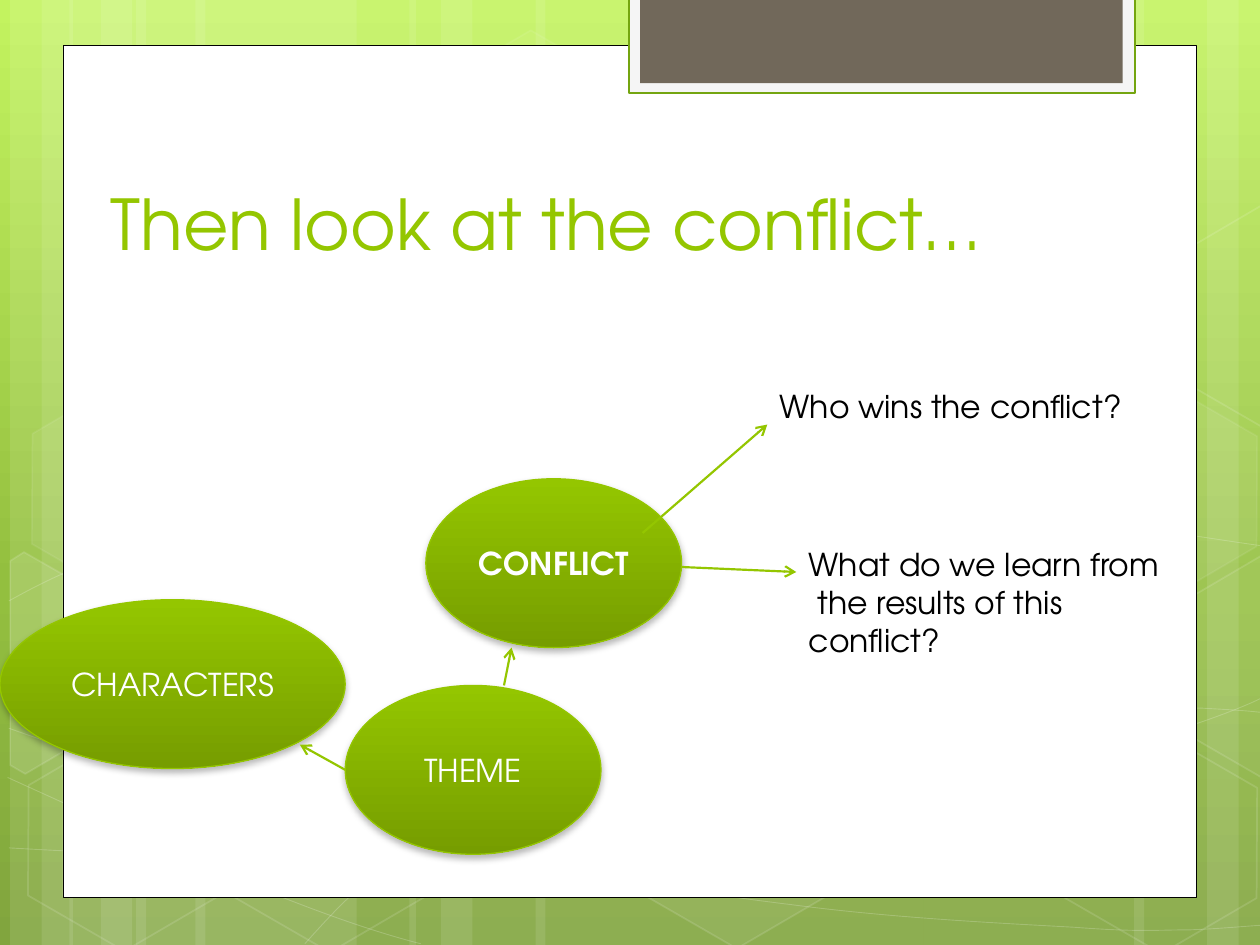
from copy import deepcopy
from math import cos, radians, sin

from lxml import etree
from pptx import Presentation
from pptx.dml.color import RGBColor
from pptx.enum.shapes import MSO_CONNECTOR, MSO_SHAPE
from pptx.enum.text import MSO_ANCHOR, PP_ALIGN
from pptx.oxml.ns import qn
from pptx.util import Inches, Pt

RECTANGLE, HEXAGON, ELLIPSE = MSO_SHAPE.RECTANGLE, MSO_SHAPE.HEXAGON, MSO_SHAPE.OVAL
STRAIGHT = MSO_CONNECTOR.STRAIGHT
LEFT, CENTER = PP_ALIGN.LEFT, PP_ALIGN.CENTER
TOP, MIDDLE, BOTTOM = MSO_ANCHOR.TOP, MSO_ANCHOR.MIDDLE, MSO_ANCHOR.BOTTOM

FONT = "TeX Gyre Adventor"
WHITE = RGBColor(0xFF, 0xFF, 0xFF)
BLACK = RGBColor(0x00, 0x00, 0x00)
GREEN = RGBColor(0x94, 0xC6, 0x00)
DARK_GREEN = RGBColor(0x76, 0x9D, 0x00)
TAB_EDGE = RGBColor(0x74, 0xA5, 0x10)
TAB_PAPER = RGBColor(0xF5, 0xF5, 0xF5)
TAB_BROWN = RGBColor(0x71, 0x68, 0x5A)
SKY = [(0, RGBColor(0xC3, 0xF3, 0x5F)), (0.62, RGBColor(0x93, 0xBF, 0x3F)),
       (1, RGBColor(0x81, 0xA5, 0x3E))]
BUBBLE = [(0, GREEN), (1, DARK_GREEN)]

# Background decoration: stripes as (left, width, rotation)
STRIPES = [(1.08, 1.75, 0), (0.08, 0.5, 0), (0.33, 0.83, 0), (1.55, 1.75, 0),
           (0.55, 0.5, 0), (0.8, 0.83, 0), (7.33, 1.75, 180), (9.58, 0.5, 180),
           (9, 0.83, 180), (4.25, 3.08, 0), (3.25, 0.5, 0), (3.5, 0.83, 0)]
# A start point, then Bezier segments (two controls, end) or straight ones (end)
WAVES = [
    [(0.07, 6.73), (0.61, 6.76, 1.15, 6.79, 1.9, 6.78), (2.65, 6.77, 3.58, 6.75, 4.58, 6.65),
     (5.58, 6.55, 7, 6.36, 7.92, 6.17), (8.83, 5.98, 9.77, 5.68, 10.07, 5.51)],
    [(0.07, 4.77), (0.36, 4.61, 0.65, 4.46, 1.21, 4.31), (1.78, 4.16, 2.59, 3.94, 3.47, 3.87),
     (4.36, 3.8, 5.44, 3.79, 6.54, 3.87), (7.64, 3.95, 9.47, 4.26, 10.07, 4.34)],
    [(0.06, 6.17), (1.27, 6.72, 2.47, 7.27, 3.34, 7.49)],
    [(0.07, 5.78), (0.38, 5.89, 0.7, 6, 1.28, 6.16), (1.86, 6.31, 2.73, 6.56, 3.57, 6.73),
     (4.4, 6.9, 5.45, 7.08, 6.28, 7.18), (7.11, 7.29, 8, 7.33, 8.53, 7.36),
     (9.05, 7.4, 9.19, 7.38, 9.45, 7.38), (9.71, 7.37, 9.89, 7.35, 10.07, 7.34)],
    [(2.42, 7.49), (2.6, 7.29, 2.78, 7.09, 3.02, 6.91), (3.26, 6.73, 3.6, 6.53, 3.88, 6.39),
     (4.16, 6.25, 4.33, 6.19, 4.7, 6.09), (5.06, 5.99, 5.73, 5.85, 6.08, 5.78),
     (6.44, 5.71, 6.49, 5.71, 6.8, 5.69), (7.11, 5.66, 7.6, 5.63, 7.94, 5.62),
     (8.29, 5.61, 8.86, 5.62, 8.86, 5.62), (9.53, 5.62),
     (9.71, 5.63, 9.88, 5.64, 9.97, 5.65), (10.06, 5.66, 10.03, 5.65, 10.06, 5.66)],
]
TILT = 30
# (left, top, fill opacity, line opacity) in percent
HEXAGONS = [(3.34, 0.36, 4, 8), (4.97, 5.89, 6, 12), (0.11, 5.91, 0, 12),
            (0.14, 3.12, 7, 8), (1.74, 5.92, 0, 12), (7.53, 4.53, 10, 12),
            (8.34, 5.93, 0, 12), (8.34, 3.14, 7, 8)]
# Hexagons cut by the slide edge: (centre, corners, fill opacity)
CUT_HEXAGONS = [
    ((0.36, 5.35), [(0.08, 4.45), (0.19, 4.38), (0.96, 4.82), (0.95, 5.7),
                    (0.2, 6.14), (0.08, 6.07)], 10),
    ((9.85, 5.2), [(9.26, 4.85), (10.01, 4.41), (10.09, 4.46), (10.09, 6.13),
                   (10.02, 6.17), (9.26, 5.73)], 4),
    ((9.85, 2.41), [(9.26, 2.07), (10.01, 1.63), (10.1, 1.68), (10.09, 3.35),
                    (10.02, 3.39), (9.26, 2.95)], 0),
]
# (box, fill, line colour, line width)
PANELS = [((0.5, 0.36, 9, 6.76), WHITE, BLACK, 0.5),
          ((4.99, -0.02, 4.02, 0.76), TAB_PAPER, TAB_EDGE, 1.25),
          ((5.08, -0.02, 3.83, 0.68), TAB_BROWN, None, 0)]

TITLE = "Then look at the conflict…"
BUBBLES = [("THEME", (2.74, 5.44, 2.03, 1.34), False),
           ("CHARACTERS", (0, 4.76, 2.74, 1.34), False),
           ("CONFLICT", (3.38, 3.8, 2.03, 1.34), True)]
ARROWS = [(4, 5.44, 4.06, 5.14), (2.74, 6.11, 2.38, 5.91),
          (5.1, 4.23, 6.09, 3.37), (5.41, 4.5, 6.32, 4.54)]
QUESTIONS = [("Who wins the conflict?", (6.09, 3.02, 2.95, 0.71), False),
             ("What do we learn from\v the results of this conflict?",
              (6.32, 4.28, 3.01, 1.01), True)]


def inches(values):
    return [Inches(value) for value in values]


def set_opacity(fill, percent):
    color = fill.fore_color._xFill[0]
    etree.SubElement(color, qn("a:alpha")).set("val", str(percent * 1000))


def style(shape, fill=None, line=None, width=0, opacity=100, line_opacity=100):
    """Give a shape flat colours and no shadow; None means no fill or no line."""
    shape.shadow.inherit = False
    for paint, color, percent in ((shape.fill, fill, opacity),
                                  (shape.line.fill, line, line_opacity)):
        if color is None or percent == 0:
            paint.background()
            continue
        paint.solid()
        paint.fore_color.rgb = color
        if percent < 100:
            set_opacity(paint, percent)
    if line is not None:
        shape.line.width = Pt(width)


def set_gradient(fill, stops):
    """Paint a top-to-bottom gradient through any number of stops."""
    fill.gradient()
    fill.gradient_angle = 270
    first = fill.gradient_stops[0]._gs
    for _ in stops[2:]:
        first.addnext(deepcopy(first))
    for stop, (position, color) in zip(fill.gradient_stops, stops):
        stop.position = position
        stop.color.rgb = color


def set_text(shape, text, size, color, align=LEFT, anchor=TOP, bold=False):
    frame = shape.text_frame
    frame.text = text
    frame.vertical_anchor = anchor
    for paragraph in frame.paragraphs:
        paragraph.alignment = align
        for span in paragraph.runs:
            span.font.name, span.font.size = FONT, Pt(size)
            span.font.bold = bold
            span.font.color.rgb = color


def add_outline(page, points, close):
    start, *rest = [inches(point) for point in points]
    builder = page.shapes.build_freeform(*start)
    builder.add_line_segments(rest, close=close)
    return builder.convert_to_shape()


def add_wave(page, wave):
    """Draw straight segments between the ends, then bend those with controls."""
    shape = add_outline(page, [segment[-2:] for segment in wave], False)
    lines = list(shape._element.iter(qn("a:lnTo")))
    for line, segment in zip(lines, wave[1:]):
        if len(segment) == 2:
            continue
        line.tag = qn("a:cubicBezTo")
        end = line[0]
        for x, y in (segment[:2], segment[2:4]):
            end.addprevious(etree.Element(qn("a:pt"), x=str(Inches(x) - shape.left),
                                          y=str(Inches(y) - shape.top)))
    style(shape, None, WHITE, 0.5, line_opacity=20)


def turn_back(point, center):
    """Where a point lies before the shape is tilted about its centre."""
    x, y = point[0] - center[0], point[1] - center[1]
    c, s = cos(radians(TILT)), sin(radians(TILT))
    return center[0] + x * c + y * s, center[1] - x * s + y * c


def add_backdrop(page):
    set_gradient(page.background.fill, SKY)
    for left, width, rotation in STRIPES:
        stripe = page.shapes.add_shape(RECTANGLE, *inches((left, 0, width, 7.5)))
        stripe.rotation = rotation
        style(stripe, WHITE, opacity=10)
    for wave in WAVES:
        add_wave(page, wave)
    for left, top, opacity, line_opacity in HEXAGONS:
        hexagon = page.shapes.add_shape(HEXAGON, *inches((left, top, 1.75, 1.52)))
        hexagon.adjustments[0] = 0.285
        hexagon.rotation = TILT
        style(hexagon, WHITE, WHITE, 1, opacity, line_opacity)
    for center, corners, opacity in CUT_HEXAGONS:
        piece = add_outline(page, [turn_back(corner, center) for corner in corners], True)
        piece.rotation = TILT
        style(piece, WHITE, WHITE, 1, opacity, 12)
    for box, fill, line, width in PANELS:
        style(page.shapes.add_shape(RECTANGLE, *inches(box)), fill, line, width)


def add_bubble(page, text, box, bold):
    bubble = page.shapes.add_shape(ELLIPSE, *inches(box))
    style(bubble, GREEN, GREEN, 0.75)
    set_gradient(bubble.fill, BUBBLE)
    effects = bubble._element.spPr.find(qn("a:effectLst"))
    shadow = etree.SubElement(effects, qn("a:outerShdw"), blurRad=str(Pt(4)),
                              dist=str(Pt(2)), dir="5400000", rotWithShape="0")
    color = etree.SubElement(shadow, qn("a:srgbClr"), val=str(BLACK))
    etree.SubElement(color, qn("a:alpha"), val="28000")
    set_text(bubble, text, 18, WHITE, CENTER, MIDDLE, bold)


def add_arrow(page, ends):
    arrow = page.shapes.add_connector(STRAIGHT, *inches(ends))
    arrow.line.color.rgb = GREEN
    arrow.line.width = Pt(1.25)
    etree.SubElement(arrow.line._get_or_add_ln(), qn("a:tailEnd"), type="arrow")
    etree.SubElement(arrow._element.spPr, qn("a:effectLst"))


deck = Presentation()
deck.slide_width, deck.slide_height = Inches(10), Inches(7.5)
page = deck.slides.add_slide(deck.slide_layouts[5])
add_backdrop(page)

title = page.shapes.title
title.left, title.top, title.width, title.height = inches((0.78, 0.9, 7.68, 1.25))
set_text(title, TITLE, 40, GREEN, anchor=BOTTOM)
page.shapes._spTree.append(title._element)  # bring in front of the white panel

for bubble in BUBBLES:
    add_bubble(page, *bubble)
for ends in ARROWS:
    add_arrow(page, ends)
for text, box, wrap in QUESTIONS:
    question = page.shapes.add_textbox(*inches(box))
    question.text_frame.word_wrap = wrap
    set_text(question, text, 18, BLACK)

deck.save("out.pptx")
